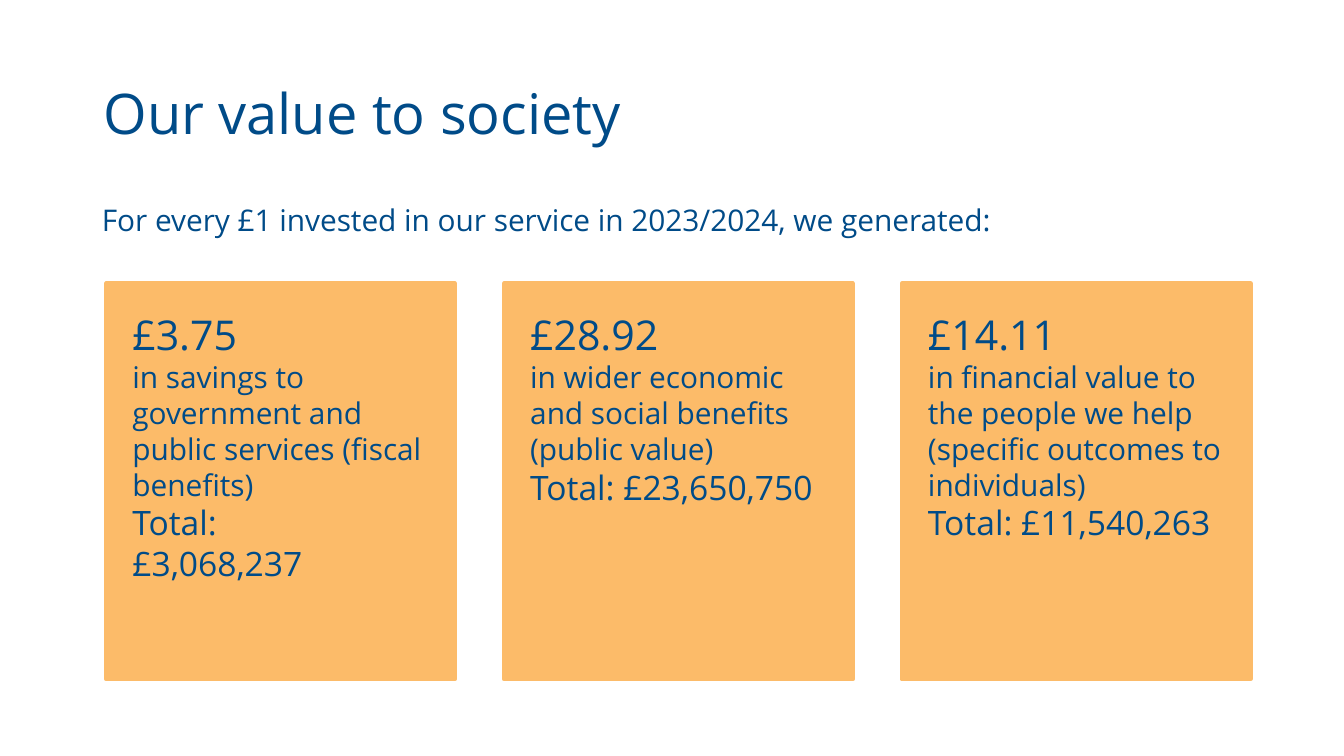
from dataclasses import dataclass

from pptx import Presentation
from pptx.dml.color import RGBColor
from pptx.enum.shapes import MSO_SHAPE as Shape
from pptx.enum.text import MSO_ANCHOR as Anchor, MSO_AUTO_SIZE as AutoSize, PP_ALIGN as Align
from pptx.util import Emu, Pt

PX = 4572  # 200 px to the inch


@dataclass(frozen=True)
class Theme:
    font: str = "Open Sans"
    ink: RGBColor = RGBColor(0x00, 0x4B, 0x88)
    card: RGBColor = RGBColor(0xFC, 0xBB, 0x69)
    title: int = 30
    figure: int = 22
    total: int = 18
    body: int = 16
    border: float = 2.25


THEME = Theme()

BENEFITS = [
    ("£3.75", "in savings to government and public services (fiscal benefits)",
     ["Total:", "£3,068,237"]),
    ("£28.92", "in wider economic and social benefits (public value)",
     ["Total: £23,650,750"]),
    ("£14.11", "in financial value to the people we help (specific outcomes to individuals)",
     ["Total: £11,540,263"]),
]


def px(length):
    return Emu(length * PX)


def write(frame, lines, inset):
    """Fill a text frame with (text, size) lines, one paragraph each."""
    frame.word_wrap = True
    frame.auto_size = AutoSize.NONE
    frame.vertical_anchor = Anchor.TOP
    frame.margin_left = frame.margin_right = px(inset)
    frame.margin_top = frame.margin_bottom = px(inset)
    for index, (text, size) in enumerate(lines):
        paragraph = frame.add_paragraph() if index else frame.paragraphs[0]
        paragraph.alignment = Align.LEFT
        run = paragraph.add_run()
        run.text = text
        run.font.name = THEME.font
        run.font.size = Pt(size)
        run.font.color.rgb = THEME.ink


def place_title(slide, left, top, width, height):
    title = slide.shapes.title
    title.left, title.top, title.width, title.height = map(px, (left, top, width, height))
    write(title.text_frame, [("Our value to society", THEME.title)], inset=20)


def add_intro(slide, left, top, width, height):
    intro = slide.shapes.add_textbox(*map(px, (left, top, width, height))).text_frame
    sentence = "For every £1 invested in our service in 2023/2024, we generated:"
    write(intro, [(sentence, THEME.body)], inset=20)
    intro.paragraphs[0].line_spacing = 1.15
    intro.paragraphs[0].space_after = Pt(10)


def add_card(slide, left, top, width, height, benefit):
    figure, meaning, totals = benefit
    card = slide.shapes.add_shape(Shape.RECTANGLE, *map(px, (left, top, width, height)))
    card.shadow.inherit = False
    card.fill.solid()
    card.fill.fore_color.rgb = THEME.card
    card.line.color.rgb = THEME.card
    card.line.width = Pt(THEME.border)
    lines = [(figure, THEME.figure), (meaning, THEME.body)]
    lines += [(total, THEME.total) for total in totals]
    write(card.text_frame, lines, inset=39)


def add_cards(slide, left, top, width, height, gap):
    """Share the width equally between the benefit cards."""
    count = len(BENEFITS)
    card_width = (width - gap * (count - 1)) // count
    for column, benefit in enumerate(BENEFITS):
        add_card(slide, left + column * (card_width + gap), top, card_width, height, benefit)


def main():
    deck = Presentation()
    deck.slide_width, deck.slide_height = px(2000), px(1125)
    slide = deck.slides.add_slide(deck.slide_layouts[5])  # title only

    place_title(slide, 134, 97, 1728, 132)
    add_intro(slide, 132, 272, 1730, 112)
    add_cards(slide, 158, 422, 1703, 589, gap=73)

    deck.save("out.pptx")


if __name__ == "__main__":
    main()
